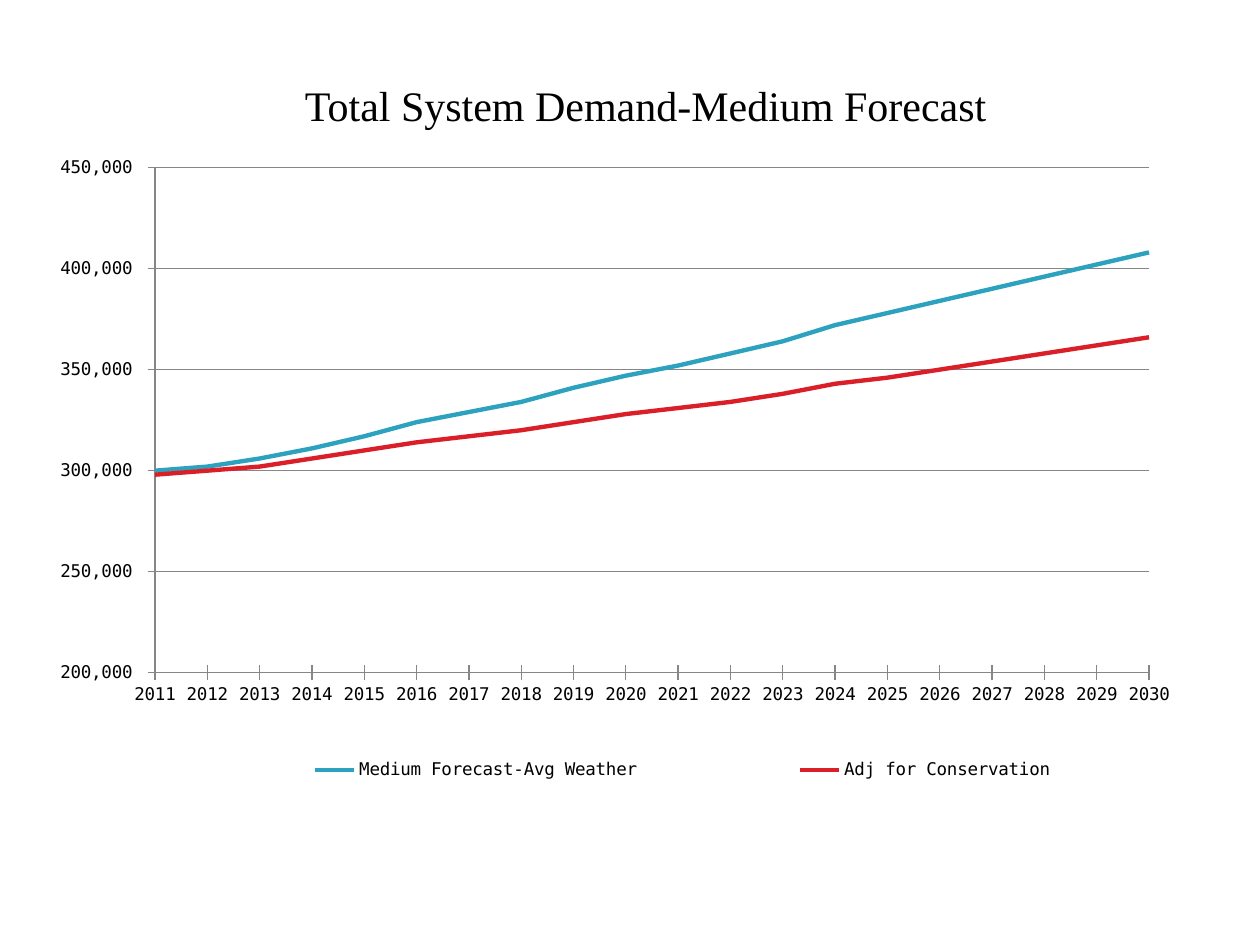
from lxml import etree
from pptx import Presentation
from pptx.chart.data import CategoryChartData
from pptx.dml.color import RGBColor
from pptx.enum.chart import XL_CHART_TYPE, XL_LEGEND_POSITION, XL_TICK_MARK
from pptx.enum.text import MSO_AUTO_SIZE, PP_ALIGN
from pptx.oxml.ns import qn
from pptx.util import Inches, Pt

LINE = XL_CHART_TYPE.LINE
RIGHT = XL_LEGEND_POSITION.RIGHT
CROSS = XL_TICK_MARK.CROSS
NO_TICK = XL_TICK_MARK.NONE
CENTER = PP_ALIGN.CENTER
FIT_SHAPE = MSO_AUTO_SIZE.SHAPE_TO_FIT_TEXT

BLACK = RGBColor(0x00, 0x00, 0x00)
GRAY = RGBColor(0x86, 0x86, 0x86)
TEAL = RGBColor(0x2D, 0xA2, 0xBF)
RED = RGBColor(0xDA, 0x1F, 0x28)

NUMBER_FORMAT = '_(* #,##0_);_(* \\(#,##0\\);_(* "-"??_);_(@_)'
YEARS = [str(year) for year in range(2011, 2031)]
# Demand in thousands
FORECASTS = [
    ("Medium Forecast-Avg Weather", TEAL,
     [300, 302, 306, 311, 317, 324, 329, 334, 341, 347,
      352, 358, 364, 372, 378, 384, 390, 396, 402, 408]),
    ("Adj for Conservation", RED,
     [298, 300, 302, 306, 310, 314, 317, 320, 324, 328,
      331, 334, 338, 343, 346, 350, 354, 358, 362, 366]),
]


def add_text(p, text, font="Times New Roman", size=24, color=BLACK, align=CENTER):
    p.alignment = align
    r = p.add_run()
    r.text = text
    r.font.name = font
    r.font.size = Pt(size)
    r.font.color.rgb = color


def set_layout(parent, index, box, chart_size, inner=False):
    """Fix a chart part at box (left, top, width, height in inches)."""
    for old in parent.findall(qn("c:layout")):
        parent.remove(old)
    layout = etree.Element(qn("c:layout"))
    manual = etree.SubElement(layout, qn("c:manualLayout"))
    settings = [("layoutTarget", "inner")] if inner else []
    settings += [("xMode", "edge"), ("yMode", "edge")]
    settings += [(tag, length / total)
                 for tag, length, total in zip("xywh", box, chart_size * 2)]
    for tag, value in settings:
        etree.SubElement(manual, qn(f"c:{tag}")).set("val", str(value))
    parent.insert(index, layout)


class SlideBuilder:
    """Holds the chart style and the current slide."""

    chart_font = "DejaVu Sans Mono"
    chart_size = 10
    line_width = 2.5
    axis_width = 0.75

    def __init__(self, slide):
        self.slide = slide

    def title(self, text, left, top, width, height):
        sp = self.slide.shapes.add_textbox(
            Inches(left), Inches(top), Inches(width), Inches(height))
        tf = sp.text_frame
        tf.word_wrap = True
        tf.auto_size = FIT_SHAPE
        add_text(tf.paragraphs[0], text)

    def style_line(self, line, color, width):
        line.color.rgb = color
        line.width = Pt(width)

    def line_chart(self, left, top, width, height):
        data = CategoryChartData(number_format=NUMBER_FORMAT)
        data.categories = YEARS
        for name, _, thousands in FORECASTS:
            data.add_series(name, [value * 1000 for value in thousands])
        chart = self.slide.shapes.add_chart(
            LINE, Inches(left), Inches(top), Inches(width), Inches(height),
            data).chart
        chart.has_title = False
        chart.font.name = self.chart_font
        chart.font.size = Pt(self.chart_size)
        chart.font.color.rgb = BLACK

        # Series
        plot = chart.plots[0]
        plot.vary_by_categories = False
        for series, (_, color, _) in zip(plot.series, FORECASTS):
            series.smooth = False
            self.style_line(series.format.line, color, self.line_width)

        # Axes
        values = chart.value_axis
        values.minimum_scale = 200000
        values.maximum_scale = 450000
        values.major_unit = 50000
        values.tick_labels.number_format = NUMBER_FORMAT
        values.tick_labels.number_format_is_linked = False
        values.has_major_gridlines = True
        self.style_line(values.major_gridlines.format.line, GRAY, self.axis_width)
        for axis in (chart.category_axis, values):
            axis.major_tick_mark = CROSS
            axis.minor_tick_mark = NO_TICK
            self.style_line(axis.format.line, GRAY, self.axis_width)

        # The lines start on the value axis
        plot_area = chart.element.find(".//" + qn("c:plotArea"))
        crosses = plot_area.find(qn("c:valAx")).find(qn("c:crosses"))
        cross_between = etree.Element(qn("c:crossBetween"))
        cross_between.set("val", "midCat")
        crosses.addnext(cross_between)

        # Legend and plot area
        chart.has_legend = True
        chart.legend.position = RIGHT
        chart.legend.include_in_layout = False
        legend = chart.element.find(".//" + qn("c:legend"))
        size = (width, height)
        set_layout(legend, 1, (0.92, 4.97, 8.33, 0.28), size)
        set_layout(plot_area, 0, (0.9, 0.33, 7.89, 4.01), size, inner=True)


def main():
    prs = Presentation()
    prs.slide_width = Inches(10)
    prs.slide_height = Inches(7.5)
    s = SlideBuilder(prs.slides.add_slide(prs.slide_layouts[6]))

    # Demand chart
    s.line_chart(0.33, 1, 9.42, 5.58)
    # Heading
    s.title("Total System Demand-Medium Forecast", 2, 0.58, 6.25, 0.5)

    prs.save("out.pptx")


if __name__ == "__main__":
    main()
